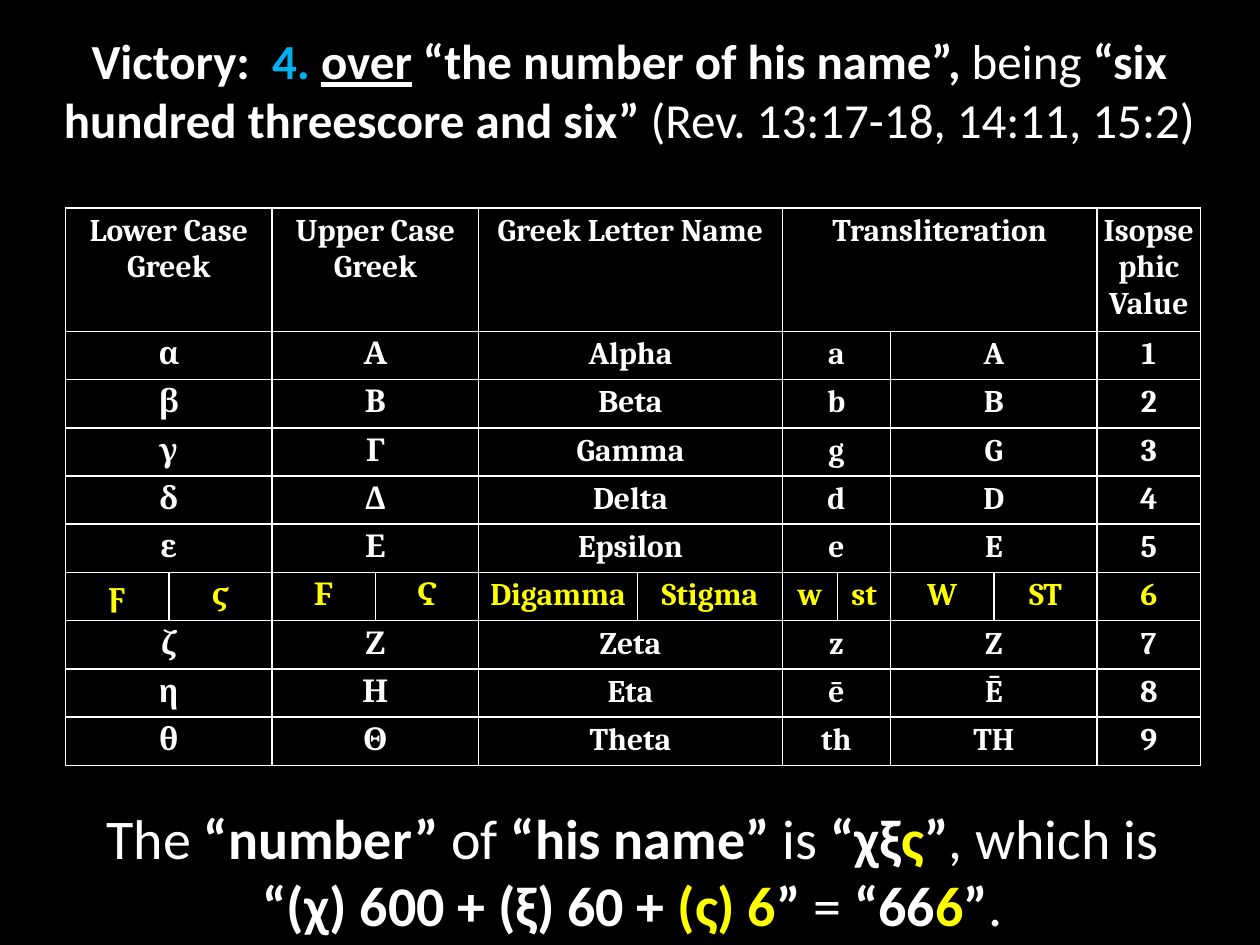
import pptx
import pptx.util
import pptx.dml.color
import pptx.enum.text
import pptx.oxml
import pptx.oxml.ns

Inches = pptx.util.Inches
COLORS = {"black": "000000", "white": "FFFFFF", "blue": "00B0F0", "yellow": "FFFF00"}
CENTER = pptx.enum.text.PP_ALIGN.CENTER


def add_run(p, text, color="white", **fmt):
    r = p.add_run()
    r.text = text
    r.font.color.rgb = pptx.dml.color.RGBColor.from_string(COLORS[color])
    for name, value in fmt.items():
        setattr(r.font, name, value)


def add_text(s, box, paragraphs, size, anchor):
    """Each run is (text, bold) or (text, bold, color, underline)."""
    tf = s.shapes.add_textbox(*map(Inches, box)).text_frame
    tf.word_wrap = True
    tf.vertical_anchor = anchor
    for i, runs in enumerate(paragraphs):
        p = tf.paragraphs[0] if i == 0 else tf.add_paragraph()
        p.alignment = CENTER
        for text, bold, color, underline in (r + ("white", False)[len(r) - 2:] for r in runs):
            add_run(p, text, color, bold=bold, underline=underline,
                    size=pptx.util.Pt(size), name="Calibri")


prs = pptx.Presentation()
prs.slide_width, prs.slide_height = Inches(10), Inches(7.5)
s = prs.slides.add_slide(prs.slide_layouts[6])
s.background.fill.solid()
s.background.fill.fore_color.rgb = pptx.dml.color.RGBColor.from_string(COLORS["black"])

# Title
add_text(s, (0.08, 0.25, 9.83, 0.92), [[
    ("Victory:  ", True), ("4. ", True, "blue"), ("over", True, "white", True),
    (" ", False), ("“the number of his name”,", True), (" being ", False),
    ("“six hundred threescore and six”", True),
    (" (Rev. 13:17-18, 14:11, 15:2)", False),
]], 28, pptx.enum.text.MSO_ANCHOR.MIDDLE)

# Letter table: None continues the cell on its left
header = ["Lower Case Greek", None, "Upper Case Greek", None, "Greek Letter Name", None,
          "Transliteration", None, None, None, "Isopsephic Value"]
stigma_row = ["ϝ", "ϛ", "Ϝ", "Ϛ", "Digamma", "Stigma", "w", "st", "W", "ST", "6"]
letters = [
    ("α", "Α", "Alpha", "a", "A", "1"),
    ("β", "Β", "Beta", "b", "B", "2"),
    ("γ", "Γ", "Gamma", "g", "G", "3"),
    ("δ", "Δ", "Delta", "d", "D", "4"),
    ("ε", "Ε", "Epsilon", "e", "E", "5"),
    ("ζ", "Ζ", "Zeta", "z", "Z", "7"),
    ("η", "Η", "Eta", "ē", "Ē", "8"),
    ("θ", "Θ", "Theta", "th", "TH", "9"),
]
rows = [header]
for *pairs, value in letters:
    rows.append([cell for text in pairs for cell in (text, None)] + [value])
rows.insert(6, stigma_row)

col_widths = [0.82] * 4 + [1.26, 1.15, 0.44, 0.42] + [0.82] * 3
row_heights = [0.98] + [0.383] * 9
table = s.shapes.add_table(len(rows), len(col_widths), Inches(0.52), Inches(1.65),
                           Inches(9), Inches(4.43)).table
table.first_row = table.horz_banding = False
for col, width in zip(table.columns, col_widths):
    col.width = Inches(width)
for row, height in zip(table.rows, row_heights):
    row.height = Inches(height)

margins = {f"margin_{side}": Inches(0.04) for side in ("left", "right", "top", "bottom")}
for i, row in enumerate(rows):
    for j, text in enumerate(row):
        cell = table.cell(i, j)
        for name, value in margins.items():
            setattr(cell, name, value)

        # White borders, no fill
        tcPr = cell._tc.get_or_add_tcPr()
        for side in "LRTB":
            tcPr.append(pptx.oxml.parse_xml(
                f'<a:ln{side} {pptx.oxml.ns.nsdecls("a")} w="12700"><a:solidFill>'
                f'<a:srgbClr val="{COLORS["white"]}"/></a:solidFill></a:ln{side}>'))
        cell.fill.background()

        if text is None:
            continue
        end = j
        while end + 1 < len(row) and row[end + 1] is None:
            end += 1
        if end > j:
            cell.merge(table.cell(i, end))
        p = cell.text_frame.paragraphs[0]
        p.alignment = CENTER
        add_run(p, text, "yellow" if row is stigma_row else "white",
                bold=True, size=pptx.util.Pt(18), name="Cambria")

# Conclusion
add_text(s, (0.21, 6.33, 9.62, 1.18), [
    [("The ", False), ("“number”", True), (" of ", False), ("“his name”", True),
     (" is ", False), ("“χξ", True), ("ς", True, "yellow"), ("”", True),
     (", which is", False)],
    [("“(χ) 600 + (ξ) 60 + ", True), ("(ς) 6", True, "yellow"), ("”", True),
     (" = ", False), ("“66", True), ("6", True, "yellow"), ("”", True), (".", False)],
], 32, pptx.enum.text.MSO_ANCHOR.TOP)

prs.save("out.pptx")
